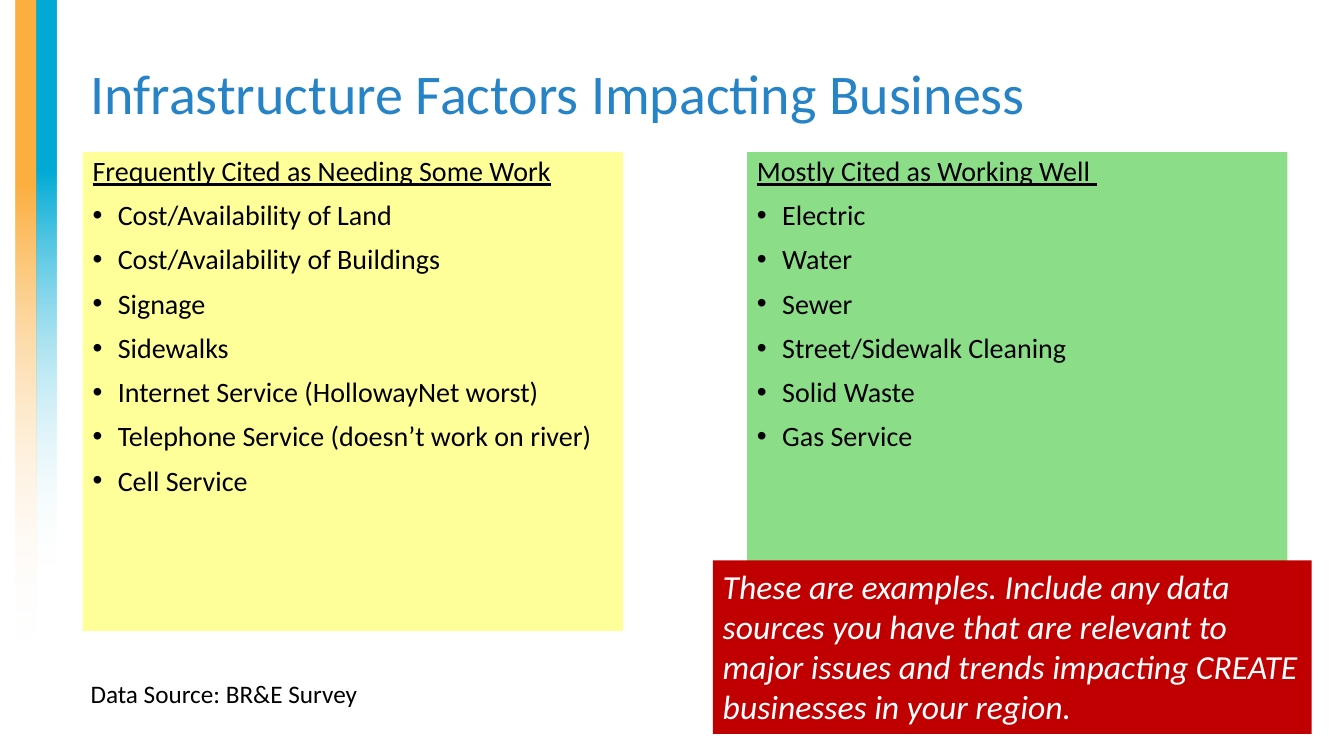
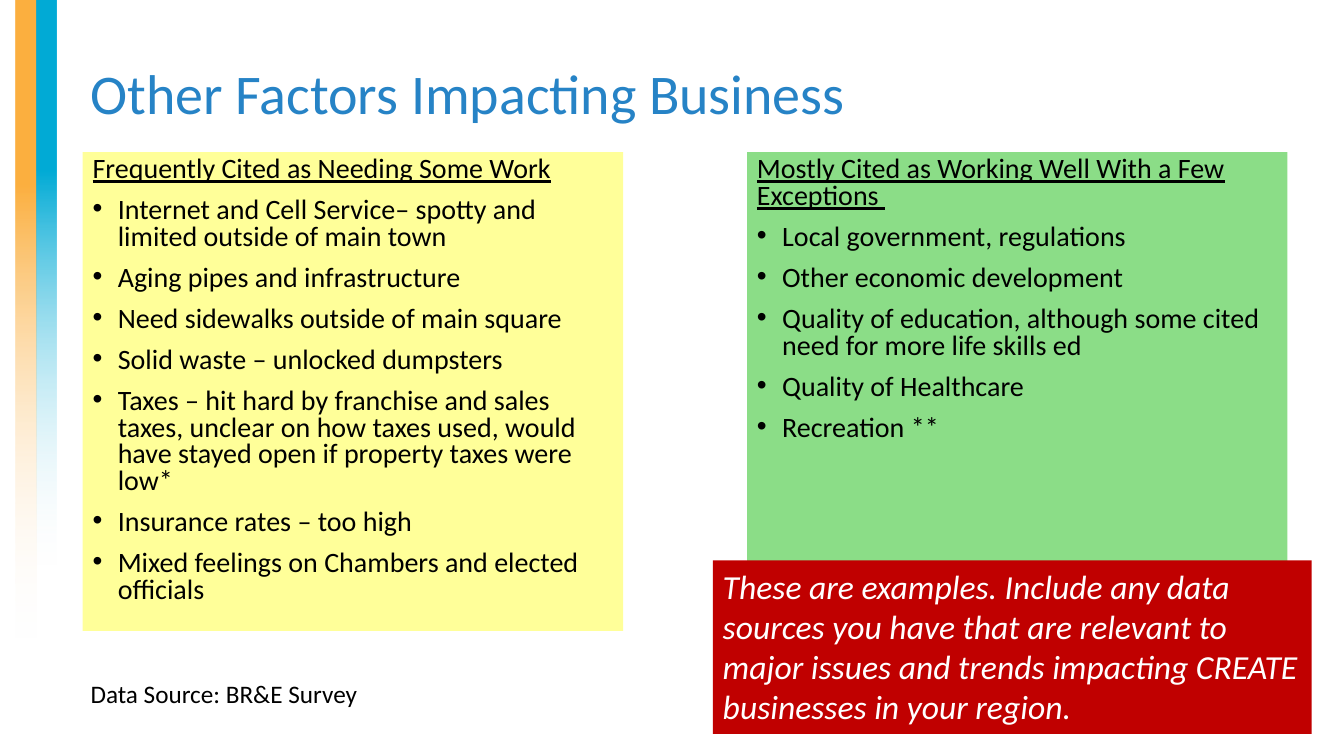
import pptx
import pptx.dml.color
import pptx.enum.shapes
import pptx.enum.text
import pptx.oxml
import pptx.oxml.ns
import pptx.util

SCALE = 9144
FONT = "Calibri"
WHITE, BLACK, BLUE, RED = "FFFFFF", "000000", "2683C6", "C00000"
YELLOW, GREEN, ORANGE, CYAN = "FFFF99", "8BDD87", "FCB040", "00ABD6"

STRIPES = [((16, 0, 20, 633), ORANGE, 0.29), ((36, 0, 20, 560), CYAN, 0.3)]
TITLE_BOX = (80, 23, 1221, 145)
COLUMN_BOXES = [(82, 151, 536, 475), (741, 151, 536, 475)]
COLUMN_COLORS = [YELLOW, GREEN]
SOURCE_BOX = (80, 668, 306, 40)
NOTE_BOX = (707, 556, 594, 172)
BULLET_INDENT = 25

SOURCE_TEXT = "Data Source: BR&E Survey"
NOTE_TEXT = (
    "These are examples. Include any data sources you have that are relevant "
    "to major issues and trends impacting CREATE businesses in your region."
)

PAGES = [
    {
        "title": "Infrastructure Factors Impacting Business",
        "spacing": 0.9,
        "columns": [
            ("Frequently Cited as Needing Some Work", [
                "Cost/Availability of Land",
                "Cost/Availability of Buildings",
                "Signage",
                "Sidewalks",
                "Internet Service (HollowayNet worst)",
                "Telephone Service (doesn’t work on river)",
                "Cell Service",
            ]),
            ("Mostly Cited as Working Well ", [
                "Electric",
                "Water",
                "Sewer",
                "Street/Sidewalk Cleaning",
                "Solid Waste",
                "Gas Service",
            ]),
        ],
    },
    {
        "title": "Other Factors Impacting Business",
        "spacing": 0.8,
        "columns": [
            ("Frequently Cited as Needing Some Work", [
                "Internet and Cell Service– spotty and limited outside of main town",
                "Aging pipes and infrastructure",
                "Need sidewalks outside of main square",
                "Solid waste – unlocked dumpsters",
                "Taxes – hit hard by franchise and sales taxes, unclear on how "
                "taxes used, would have stayed open if property taxes were low*",
                "Insurance rates – too high",
                "Mixed feelings on Chambers and elected officials",
            ]),
            ("Mostly Cited as Working Well With a Few Exceptions ", [
                "Local government, regulations",
                "Other economic development",
                "Quality of education, although some cited need for more life skills ed",
                "Quality of Healthcare",
                "Recreation **",
            ]),
        ],
    },
]


def px(length):
    return pptx.util.Emu(length * SCALE)


def color(value):
    return pptx.dml.color.RGBColor.from_string(value)


def add_box(page, box, fill=None):
    place = [px(length) for length in box]
    if fill is None:
        shape = page.shapes.add_textbox(*place)
    else:
        shape = page.shapes.add_shape(pptx.enum.shapes.MSO_SHAPE.RECTANGLE, *place)
        shape.shadow.inherit = False
        shape.fill.solid()
        shape.fill.fore_color.rgb = color(fill)
        shape.line.fill.background()
    shape.text_frame.word_wrap = True
    shape.text_frame.vertical_anchor = pptx.enum.text.MSO_ANCHOR.TOP
    return shape


def write(para, text, size, ink, underline=False, italic=False):
    para.alignment = pptx.enum.text.PP_ALIGN.LEFT
    span = para.add_run()
    span.text = text
    span.font.name = FONT
    span.font.size = pptx.util.Pt(size)
    span.font.color.rgb = color(ink)
    span.font.underline = underline
    span.font.italic = italic


def add_bullet(para):
    properties = para._p.get_or_add_pPr()
    properties.set("marL", str(px(BULLET_INDENT)))
    properties.set("indent", str(-px(BULLET_INDENT)))
    for tag, key, value in (("a:buFont", "typeface", "Arial"), ("a:buChar", "char", "•")):
        mark = pptx.oxml.parse_xml(f"<{tag} {pptx.oxml.ns.nsdecls('a')}/>")
        mark.set(key, value)
        properties.append(mark)


def add_stripe(page, box, ink, fade_start):
    stripe = add_box(page, box, ink)
    stripe.fill.gradient()
    stripe.fill.gradient_angle = 270
    stops = stripe.fill.gradient_stops
    for stop, position, value in zip(stops, (fade_start, 1), (ink, WHITE)):
        stop.position = position
        stop.color.rgb = color(value)
    last_color = stripe.element.findall(".//" + pptx.oxml.ns.qn("a:gs"))[-1][0]
    last_color.append(pptx.oxml.parse_xml(
        f'<a:alpha {pptx.oxml.ns.nsdecls("a")} val="4000"/>'))


def add_title(page, box, text):
    frame = add_box(page, box).text_frame
    frame.vertical_anchor = pptx.enum.text.MSO_ANCHOR.MIDDLE
    frame.paragraphs[0].line_spacing = 0.9
    write(frame.paragraphs[0], text, 40, BLUE)


def add_column(page, box, fill, heading, items, spacing):
    frame = add_box(page, box, fill).text_frame
    frame.paragraphs[0].line_spacing = spacing
    write(frame.paragraphs[0], heading, 20, BLACK, underline=True)
    for item in items:
        para = frame.add_paragraph()
        add_bullet(para)
        para.line_spacing = spacing
        para.space_before = pptx.util.Pt(10)
        write(para, item, 20, BLACK)


def add_source(page, box):
    write(add_box(page, box).text_frame.paragraphs[0], SOURCE_TEXT, 18, BLACK)


def add_note(page, box):
    frame = add_box(page, box, RED).text_frame
    write(frame.paragraphs[0], NOTE_TEXT, 24, WHITE, italic=True)


def add_page(deck, content):
    page = deck.slides.add_slide(deck.slide_layouts[6])
    for box, ink, fade_start in STRIPES:
        add_stripe(page, box, ink, fade_start)
    add_title(page, TITLE_BOX, content["title"])
    for box, fill, (heading, items) in zip(COLUMN_BOXES, COLUMN_COLORS, content["columns"]):
        add_column(page, box, fill, heading, items, content["spacing"])
    add_source(page, SOURCE_BOX)
    add_note(page, NOTE_BOX)


def main():
    deck = pptx.Presentation()
    deck.slide_width = px(1333)
    deck.slide_height = px(750)
    for content in PAGES:
        add_page(deck, content)
    deck.save("out.pptx")


if __name__ == "__main__":
    main()
